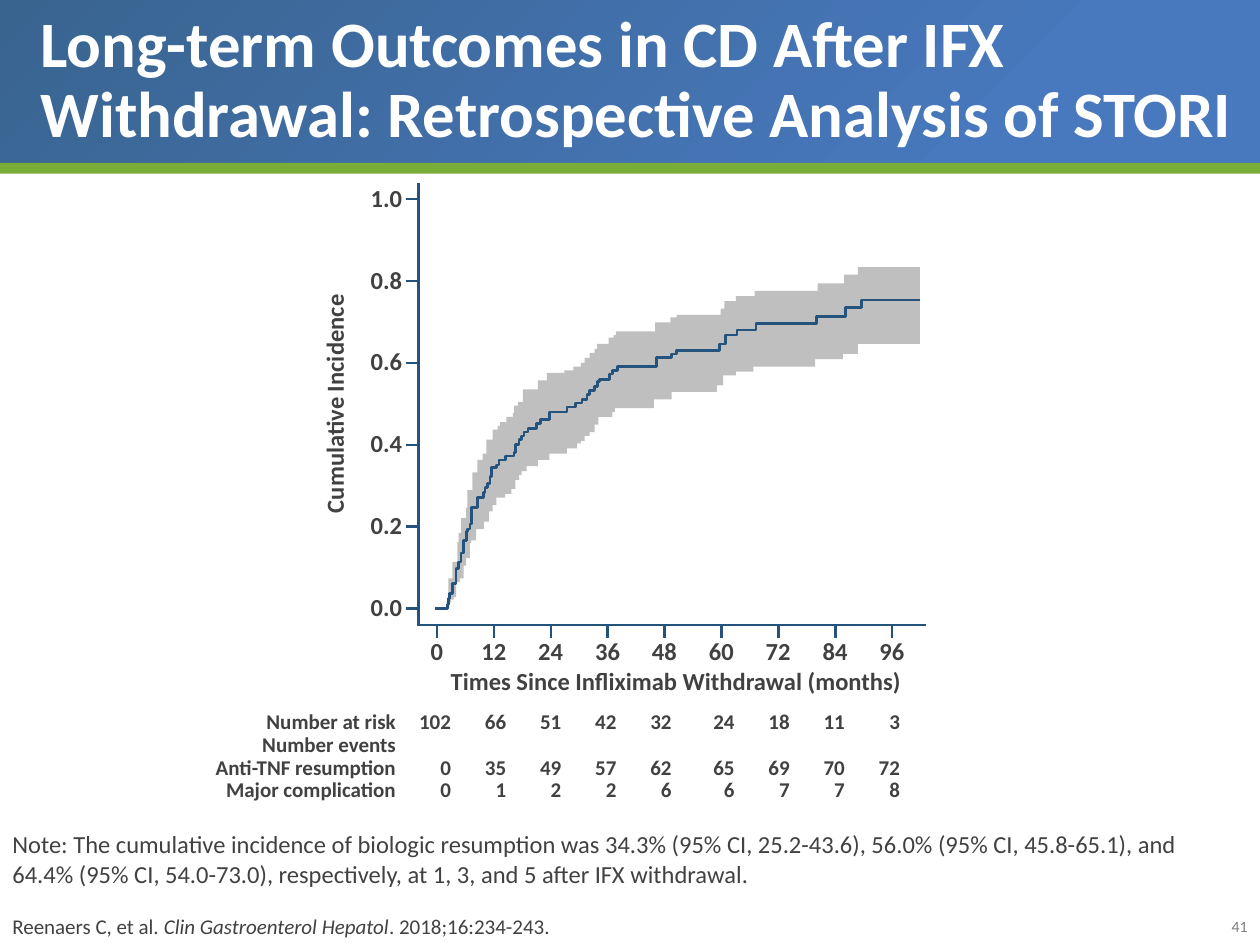
"""Build a slide on cumulative incidence after IFX withdrawal, drawn as a step curve with a confidence band."""
from dataclasses import dataclass

from lxml.etree import SubElement
from pptx import Presentation
from pptx.dml.color import RGBColor as Rgb
from pptx.enum.shapes import MSO_CONNECTOR as Connector, MSO_SHAPE as Shape
from pptx.enum.text import MSO_ANCHOR as Anchor, MSO_AUTO_SIZE as AutoSize, PP_ALIGN as Align
from pptx.oxml import parse_xml
from pptx.oxml.ns import nsdecls, qn
from pptx.util import Pt


@dataclass(frozen=True)
class Theme:
    """Colours and type sizes of the slide."""
    font: str = "Calibri"
    ink: Rgb = Rgb(0x41, 0x41, 0x41)
    white: Rgb = Rgb(0xFF, 0xFF, 0xFF)
    grey: Rgb = Rgb(0x7F, 0x7F, 0x7F)
    curve: Rgb = Rgb(0x24, 0x53, 0x7D)
    band: Rgb = Rgb(0xBF, 0xBF, 0xBF)
    green: Rgb = Rgb(0x79, 0xAD, 0x38)
    header_dark: Rgb = Rgb(0x39, 0x64, 0x90)
    header_light: Rgb = Rgb(0x48, 0x78, 0xBD)
    title: int = 37
    label: int = 14
    small: int = 12
    number: int = 9
    stroke: float = 1.5


class Painter:
    """Holds the theme and the current slide and draws each kind of element."""
    grid = Pt(0.72)

    def __init__(self, slide, theme):
        self.slide, self.shapes, self.theme = slide, slide.shapes, theme

    def style(self, paragraph, size, color=None, bold=False, align=Align.LEFT, spacing=None):
        font = paragraph.font
        font.name, font.size, font.bold = self.theme.font, Pt(size), bold
        font.color.rgb = color or self.theme.ink
        paragraph.alignment, paragraph.line_spacing = align, spacing

    def title(self, text, box):
        title = self.shapes.title
        title.left, title.top, title.width, title.height = map(Pt, box)
        frame = title.text_frame
        frame.text, frame.word_wrap = text, True
        frame.auto_size, frame.vertical_anchor = AutoSize.NONE, Anchor.BOTTOM
        self.style(frame.paragraphs[0], self.theme.title, self.theme.white, True, spacing=0.9)
        title.element.getparent().append(title.element)

    def text(self, lines, box, size, anchor=Anchor.TOP, wrap=True, rotation=0, **look):
        holder = self.shapes.add_textbox(*map(Pt, box))
        holder.rotation = rotation
        frame = holder.text_frame
        frame.word_wrap, frame.vertical_anchor = wrap, anchor
        for index, line in enumerate(lines):
            paragraph = frame.add_paragraph() if index else frame.paragraphs[0]
            paragraph.add_run().text = line
            self.style(paragraph, size, **look)
        return frame.paragraphs

    def tabs(self, paragraph, stops, align):
        properties = paragraph._p.get_or_add_pPr()
        tab_list = parse_xml(f"<a:tabLst {nsdecls('a')}/>")
        for stop in stops:
            SubElement(tab_list, qn("a:tab"), pos=str(Pt(stop)), algn=align)
        properties.find(qn("a:defRPr")).addprevious(tab_list)

    def bar(self, box, color=None):
        bar = self.shapes.add_shape(Shape.RECTANGLE, *map(Pt, box))
        bar.shadow.inherit = False
        bar.line.fill.background()
        if color:
            bar.fill.solid()
            bar.fill.fore_color.rgb = color
        return bar

    def header(self, box):
        fill = self.bar(box).fill
        fill.gradient()
        colors = (self.theme.header_dark, self.theme.header_light)
        for stop, color, position in zip(fill.gradient_stops, colors, (0, 0.79)):
            stop.color.rgb, stop.position = color, position
        linear = next(self.shapes[-1].element.iter(qn("a:lin")))
        linear.getparent().replace(linear, parse_xml(
            f'<a:path {nsdecls("a")} path="circle"><a:fillToRect r="100000" b="100000"/></a:path>'))

    def line(self, *ends):
        line = self.shapes.add_connector(Connector.STRAIGHT, *map(Pt, ends))
        line.line.color.rgb, line.line.width = self.theme.curve, Pt(self.theme.stroke)
        SubElement(line.element.spPr, qn("a:effectLst"))

    def outline(self, points, fill=None):
        builder = self.shapes.build_freeform(*points[0], scale=self.grid)
        builder.add_line_segments(points[1:], close=fill is not None)
        outline = builder.convert_to_shape()
        outline.shadow.inherit = False
        if fill:
            outline.fill.solid()
            outline.fill.fore_color.rgb = fill
            outline.line.fill.background()
        else:
            outline.fill.background()
            outline.line.color.rgb = self.theme.curve
            outline.line.width = Pt(self.theme.stroke)


def steps(start, jumps, end):
    """Turn jumps (x, new level) into the corners of a step curve."""
    points = [start]
    for x, level in jumps:
        points += [(x, points[-1][1]), (x, level)]
    return points + [(end, points[-1][1])]


UPPER = [
    (356, 459), (359, 446), (363, 430), (364, 423), (366, 411), (370, 403), (371, 389),
    (375, 375), (379, 365), (383, 360), (386, 349), (391, 341), (395, 338), (397, 335),
    (402, 331), (407, 328), (408, 322), (411, 319), (415, 309), (427, 302), (434, 296),
    (448, 294), (455, 291), (461, 288), (464, 284), (468, 280), (472, 277), (474, 273),
    (483, 268), (487, 266), (489, 263), (520, 256), (532, 252), (537, 250), (572, 245),
    (575, 239), (584, 235), (599, 231), (649, 225), (670, 218), (681, 212)]
LOWER = [
    (358, 476), (360, 474), (362, 462), (365, 459), (368, 449), (370, 443), (373, 431),
    (374, 429), (378, 420), (384, 414), (388, 406), (391, 401), (394, 395), (401, 392),
    (406, 388), (409, 381), (412, 377), (414, 374), (418, 370), (427, 365), (436, 360),
    (450, 356), (458, 352), (461, 350), (464, 346), (468, 343), (472, 337), (475, 331),
    (486, 327), (488, 324), (519, 317), (533, 311), (569, 306), (574, 298), (584, 295),
    (598, 291), (647, 285), (669, 281), (681, 273)]
INCIDENCE = [
    (355, 480), (356, 475), (357, 471), (359, 463), (362, 451), (364, 446), (366, 439),
    (368, 429), (370, 422), (371, 420), (373, 416), (374, 403), (379, 395), (384, 391),
    (385, 387), (387, 384), (389, 378), (390, 371), (394, 369), (396, 365), (401, 362),
    (408, 359), (409, 353), (412, 349), (414, 346), (416, 343), (419, 340), (426, 336),
    (429, 333), (436, 327), (450, 323), (457, 320), (462, 317), (466, 313), (468, 310),
    (472, 307), (474, 303), (476, 301), (484, 297), (486, 294), (490, 291), (521, 284),
    (533, 281), (537, 278), (571, 273), (576, 266), (585, 262), (600, 257), (648, 251),
    (671, 244), (684, 238)]
COUNTS = [
    ("Number at risk", 102, 66, 51, 42, 32, 24, 18, 11, 3),
    ("Number events",),
    ("Anti-TNF resumption", 0, 35, 49, 57, 62, 65, 69, 70, 72),
    ("Major complication", 0, 1, 2, 2, 6, 6, 7, 7, 8)]


def main():
    """Lay out the header, the plot, the counts and the notes."""
    deck = Presentation()
    deck.slide_width, deck.slide_height = Pt(720), Pt(540)
    theme = Theme()
    painter = Painter(deck.slides.add_slide(deck.slide_layouts[5]), theme)

    painter.header((0, 0, 720, 98.5))
    painter.text(["41"], (690, 520.5, 30, 18), theme.number, color=theme.grey, align=Align.RIGHT)
    painter.bar((0, 93, 720, 6.2), theme.green)
    painter.title("Long-term Outcomes in CD After IFX Withdrawal: Retrospective Analysis of STORI",
                  (16, 0, 704, 90))

    note, citation = painter.text(
        ["Note: The cumulative incidence of biologic resumption was 34.3% (95% CI, 25.2-43.6), "
         "56.0% (95% CI, 45.8-65.1), and 64.4% (95% CI, 54.0-73.0), respectively, at 1, 3, and 5 "
         "after IFX withdrawal.", "Reenaers C, et al. "],
        (0, 469.5, 711.5, 70.5), theme.label, Anchor.BOTTOM)
    citation.font.size, citation.space_before = Pt(theme.small), Pt(14.5)
    journal = citation.add_run()
    journal.text, journal.font.italic = "Clin Gastroenterol Hepatol", True
    citation.add_run().text = ". 2018;16:234-243."

    painter.text(["Cumulative Incidence"], (121.7, 219.6, 140.4, 22.3), theme.label, Anchor.BOTTOM,
                 wrap=False, rotation=270, bold=True, align=Align.CENTER, spacing=0.9)
    months, axis_title = painter.text(
        ["\t".join(str(month) for month in range(0, 97, 12)),
         "Times Since Infliximab Withdrawal (months)"],
        (239, 360, 294.5, 41), theme.label, bold=True)
    painter.tabs(months, [3.6 + 32.5 * i for i in range(1, 9)], "ctr")
    axis_title.alignment = Align.CENTER
    for level in painter.text([f"{tenths / 10:.1f}" for tenths in range(10, -1, -2)],
                              (204.5, 100.8, 32.4, 260.6), theme.label, wrap=False,
                              bold=True, align=Align.RIGHT):
        level.space_after = Pt(30)

    painter.line(239, 104.4, 239, 357.5)
    painter.line(238.3, 357.2, 529.2, 357.2)
    for i in range(6):
        painter.line(231.8, 113.8 + 46.8 * i, 239, 113.8 + 46.8 * i)
    for i in range(9):
        painter.line(249.8 + 32.5 * i, 357.2, 249.8 + 32.5 * i, 364.4)

    counts = painter.text(["".join(f"\t{cell}" for cell in row) for row in COUNTS],
                          (102.2, 403.2, 434.9, 59.8), theme.small, bold=True, spacing=0.9)
    for row in counts:
        painter.tabs(row, [117 + 31.5 * i + (4.5 if i > 5 else 0) for i in range(10)], "r")

    upper, lower = steps((356, 479), UPPER, 730), steps((354, 478), LOWER, 730)
    painter.outline(upper + lower[::-1], theme.band)
    painter.outline(steps((345, 483), INCIDENCE, 730))
    deck.save("out.pptx")


if __name__ == "__main__":
    main()
